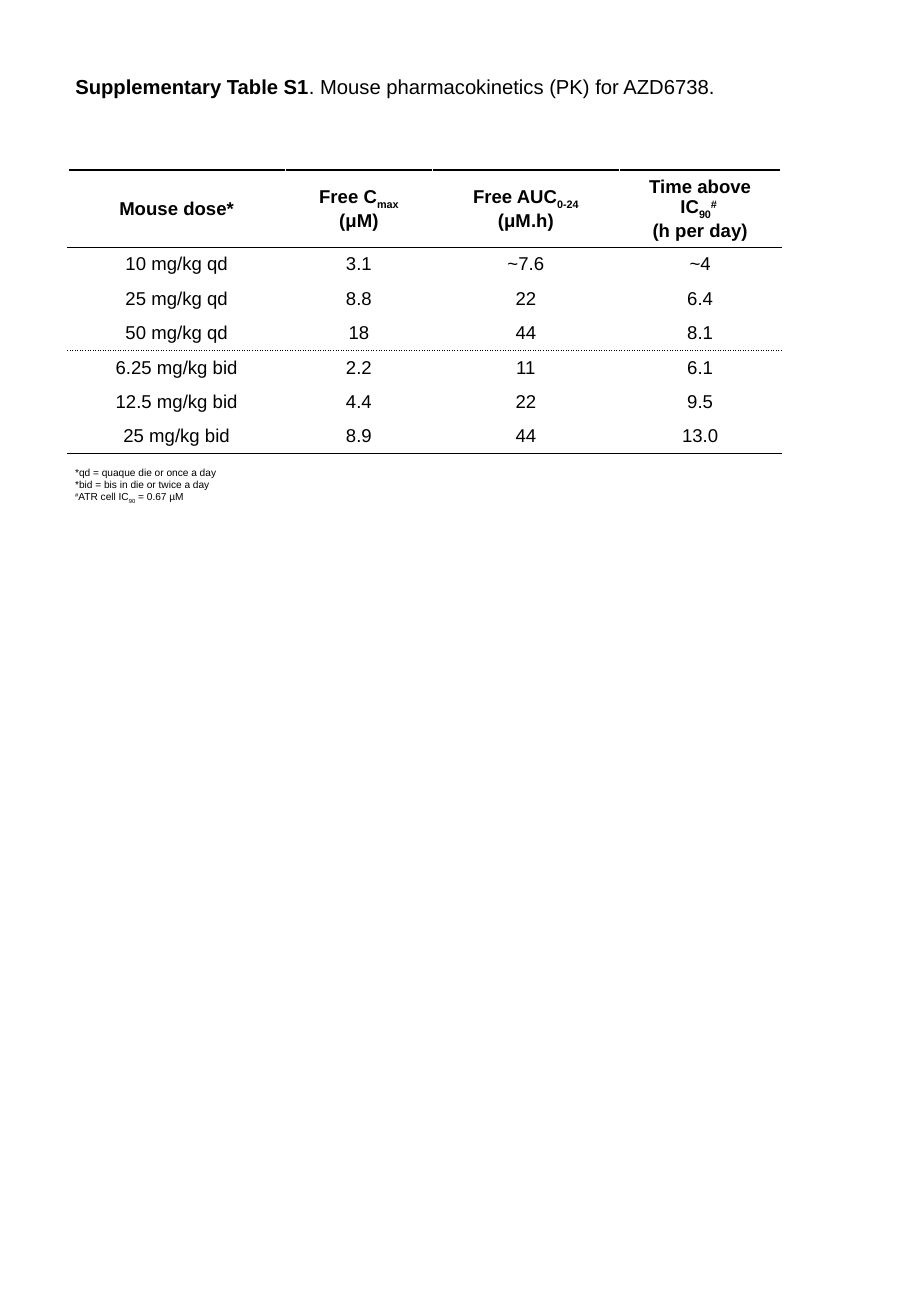
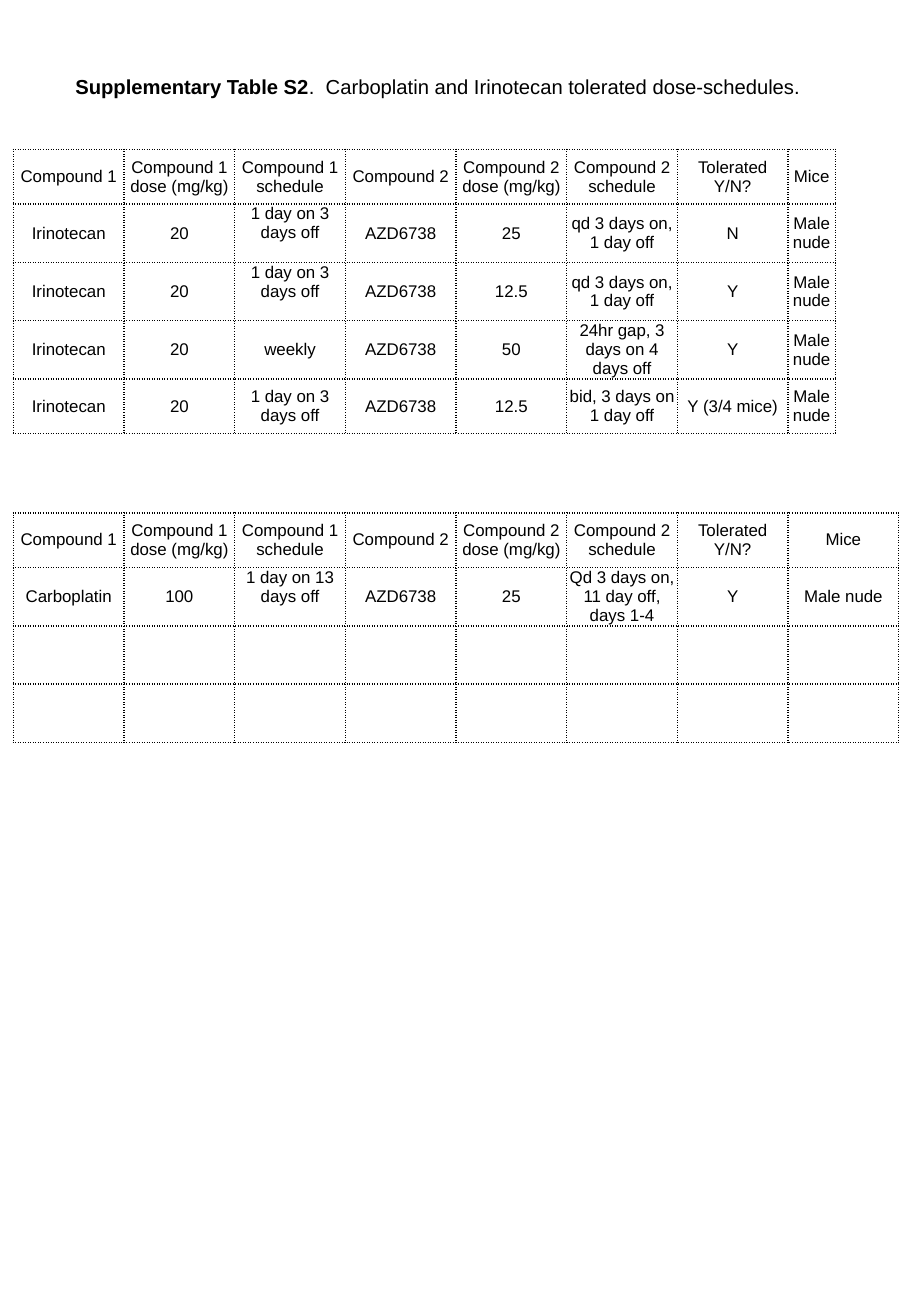
from dataclasses import dataclass

from lxml import etree
from pptx import Presentation
from pptx.dml.color import RGBColor
from pptx.enum import text as t
from pptx.oxml import ns
from pptx.util import Inches, Pt


@dataclass(frozen=True)
class Theme:
    font: str = "Arial"
    ink: str = "000000"
    paper: str = "FFFFFF"
    title: int = 12
    pk: int = 11
    dose: int = 10
    note: int = 6
    rule: int = 1


TH = Theme()
SUB, SUP = -25, 30
SOLID, DOTTED, BLANK = (TH.ink, "solid"), (TH.ink, "sysDot"), (TH.paper, "solid")

# Content: a paragraph is a string or a list of strings and (text, format) pairs
TITLES = [
    [("Supplementary Table S1", {"bold": True}), ". Mouse pharmacokinetics (PK) for AZD6738."],
    [("Supplementary Table S2", {"bold": True}),
     ".  Carboplatin and Irinotecan tolerated dose-schedules."],
]
PK_ROWS = [
    ["Mouse dose*",
     ["Free C", ("max", {"base": SUB}), " (μM)"],
     ["Free AUC", ("0-24", {"base": SUB}), " (μM.h)"],
     ["Time above IC", ("90", {"base": SUB}), ("# ", {"base": SUP}), "\n", "(h per day)"]],
    ["10 mg/kg qd", "3.1", "~7.6", "~4"],
    ["25 mg/kg qd", "8.8", "22", "6.4"],
    ["50 mg/kg qd", "18", "44", "8.1"],
    ["6.25 mg/kg bid", "2.2", "11", "6.1"],
    ["12.5 mg/kg bid", "4.4", "22", "9.5"],
    ["25 mg/kg bid", "8.9", "44", "13.0"],
]
PK_RULES = {0: SOLID, 1: SOLID, 4: DOTTED, 7: SOLID}  # horizontal rule above row n
NOTES = [
    "*qd = quaque die or once a day",
    "*bid = bis in die or twice a day",
    [("#", {"base": SUP}), "ATR cell IC", ("90", {"base": SUB}), " = 0.67 µM"],
]
DOSE_HEAD = ["Compound 1", "Compound 1 dose (mg/kg)", "Compound 1 schedule", "Compound 2",
             "Compound 2 dose (mg/kg)", "Compound 2 schedule", "Tolerated Y/N?", "Mice"]
IRINOTECAN_ROWS = [
    DOSE_HEAD,
    ["Irinotecan", "20", "1 day on 3 days off", "AZD6738", "25",
     "qd 3 days on, 1 day off", "N", "Male nude"],
    ["Irinotecan", "20", "1 day on 3 days off", "AZD6738", "12.5",
     "qd 3 days on, 1 day off", "Y", "Male nude"],
    ["Irinotecan", "20", "weekly", "AZD6738", "50",
     "24hr gap, 3 days on 4 days off", "Y", "Male nude"],
    ["Irinotecan", "20", "1 day on 3 days off", "AZD6738", "12.5",
     "bid, 3 days on 1 day off", "Y (3/4 mice)", "Male nude"],
]
CARBOPLATIN_ROWS = [
    DOSE_HEAD,
    ["Carboplatin", "100", "1 day on 13 days off", "AZD6738", "25",
     "Qd 3 days on, 11 day off, days 1-4", "Y", "Male nude"],
    [""] * 8,
    [""] * 8,
]


def write(tf, paragraphs, size, bold=False, align=t.PP_ALIGN.LEFT, spacing=None):
    for i, runs in enumerate(paragraphs):
        p = tf.paragraphs[0] if i == 0 else tf.add_paragraph()
        p.alignment = align
        p.font.size = Pt(size)
        if spacing:
            p.line_spacing = spacing
        for run in [runs] if isinstance(runs, str) else runs:
            content, fmt = (run, {}) if isinstance(run, str) else run
            if content == "\n":
                p.add_line_break()
            elif content:
                r = p.add_run()
                r.text = content
                f = r.font
                f.name, f.size, f.bold = TH.font, Pt(size), fmt.get("bold", bold)
                f.color.rgb = RGBColor.from_string(TH.ink)
                if "base" in fmt:
                    r._r.get_or_add_rPr().set("baseline", str(fmt["base"] * 1000))


def border(cell, **sides):
    tcPr = cell._tc.get_or_add_tcPr()
    for side in "LRTB":
        color, dash = sides[side]
        ln = etree.SubElement(tcPr, ns.qn(f"a:ln{side}"), w=str(Pt(TH.rule)))
        fill = etree.SubElement(ln, ns.qn("a:solidFill"))
        etree.SubElement(fill, ns.qn("a:srgbClr"), val=color)
        etree.SubElement(ln, ns.qn("a:prstDash"), val=dash)


def add_table(slide, rows, left, top, widths, heights, size, rule, side, margin=None,
              bold_head=False):
    """rule(n) is the horizontal line above row n; side is every vertical line."""
    tbl = slide.shapes.add_table(len(rows), len(widths), Inches(left), Inches(top),
                                 Inches(sum(widths)), Inches(sum(heights))).table
    tbl.first_row = tbl.horz_banding = False
    for col, w in zip(tbl.columns, widths):
        col.width = Inches(w)
    for i, (row, h) in enumerate(zip(rows, heights)):
        tbl.rows[i].height = Inches(h)
        for j, content in enumerate(row):
            cell = tbl.cell(i, j)
            cell.vertical_anchor = t.MSO_ANCHOR.MIDDLE
            if margin is not None:
                cell.margin_left = cell.margin_right = Inches(margin)
                cell.margin_top = cell.margin_bottom = Inches(margin)
            border(cell, L=side, R=side, T=rule(i), B=rule(i + 1))
            cell.fill.background()
            write(cell.text_frame, [content], size, bold=bold_head and i == 0,
                  align=t.PP_ALIGN.CENTER)
    return tbl


def add_slide(prs, title):
    s = prs.slides.add_slide(prs.slide_layouts[5])
    sp = s.shapes.title
    sp.left, sp.top, sp.width, sp.height = map(Inches, (0.52, 0.58, 6.47, 0.55))
    tf = sp.text_frame
    tf.auto_size = t.MSO_AUTO_SIZE.NONE
    tf.vertical_anchor = t.MSO_ANCHOR.TOP
    write(tf, [title], TH.title, spacing=0.9)
    return s


def add_dose_table(slide, rows, top, widths, heights, raised):
    tbl = add_table(slide, rows, 0.11, top, widths, heights, TH.dose,
                    rule=lambda n: DOTTED, side=DOTTED, margin=0)
    for i in raised:  # schedules that sit one line higher
        tbl.cell(i, 2).margin_bottom = Inches(0.16)


def main():
    prs = Presentation()
    prs.slide_width, prs.slide_height = Inches(7.5), Inches(10.83)

    # Pharmacokinetics table and its notes
    s = add_slide(prs, TITLES[0])
    body = len(PK_ROWS) - 1
    add_table(s, PK_ROWS, 0.56, 1.4, [1.79, 1.21, 1.54, 1.33], [0.63] + [1.7 / body] * body,
              TH.pk, rule=lambda n: PK_RULES.get(n, BLANK), side=BLANK, bold_head=True)
    tf = s.shapes.add_textbox(Inches(0.52), Inches(3.79), Inches(1.39), Inches(0.4)).text_frame
    tf.word_wrap = False
    tf.auto_size = t.MSO_AUTO_SIZE.SHAPE_TO_FIT_TEXT
    write(tf, NOTES, TH.note)

    # Dose-schedule tables
    s = add_slide(prs, TITLES[1])
    col, head, line = 7.29 / 8, 0.45, 0.48
    add_dose_table(s, IRINOTECAN_ROWS, 1.23, [col] * 7 + [0.39],
                   [head] + [line] * 3 + [head], raised=(1, 2))
    add_dose_table(s, CARBOPLATIN_ROWS, 4.22, [col] * 8, [head] + [line] * 3, raised=(1,))

    prs.save("out.pptx")


if __name__ == "__main__":
    main()
